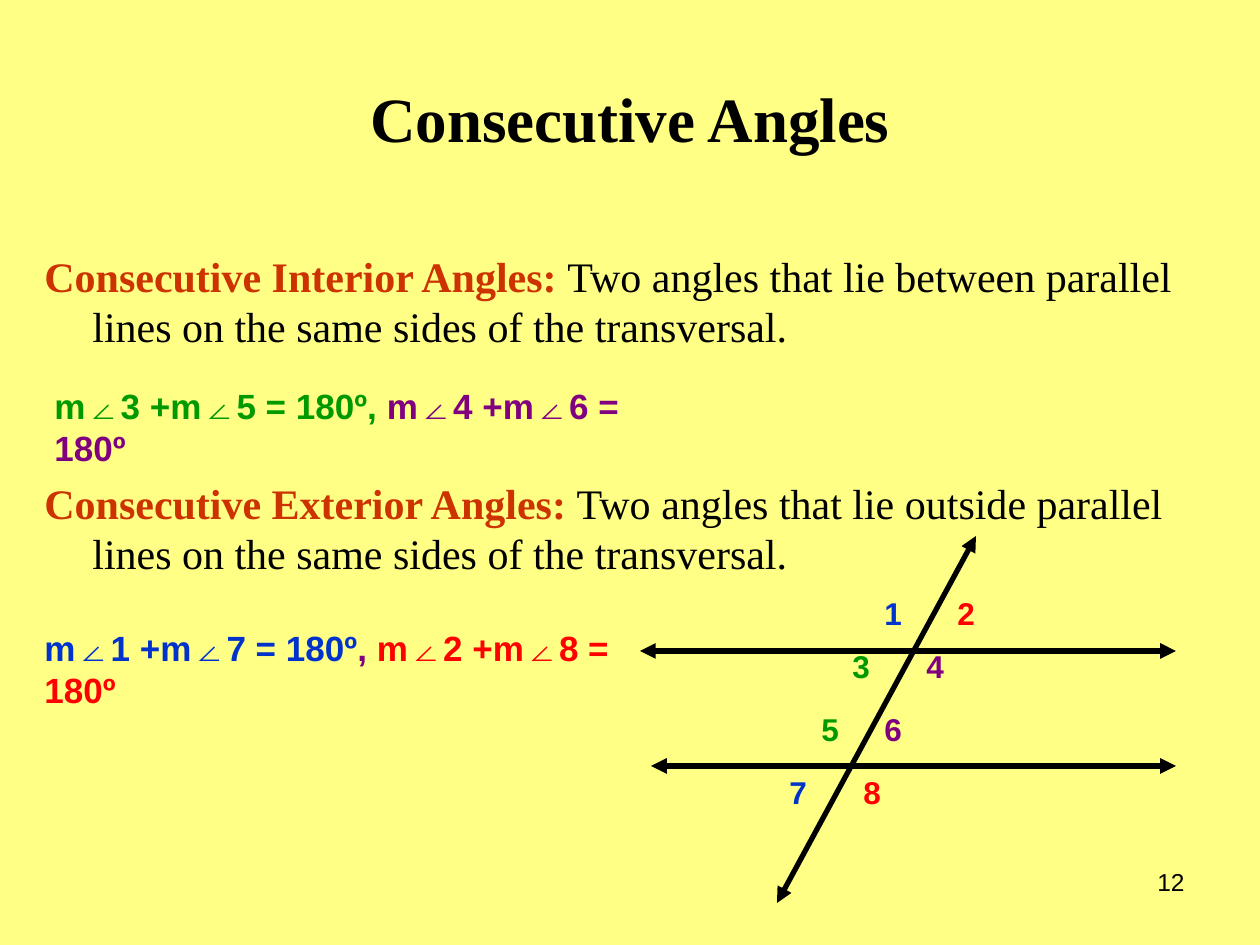
import pptx
import pptx.util
import pptx.dml.color
import pptx.enum.shapes
import pptx.enum.text
import pptx.oxml.ns
from lxml import etree
from typing import NamedTuple

PX = 914400 / 126
HUES = {
    "page": "FFFF85", "black": "000000", "rust": "CC3300", "green": "009900",
    "purple": "800080", "blue": "0033CC", "red": "FF0000",
}
ALIGN = pptx.enum.text.PP_ALIGN
ANCHOR = pptx.enum.text.MSO_ANCHOR


class Run(NamedTuple):
    text: str
    hue: str = "black"
    bold: bool = True


class Box(NamedTuple):
    left: int
    top: int
    width: int
    height: int


class Line(NamedTuple):
    x1: int
    y1: int
    x2: int
    y2: int


class Label(NamedTuple):
    text: str
    hue: str
    left: int
    top: int


def emu(px: int) -> int:
    return round(px * PX)


def rgb(hue: str) -> pptx.dml.color.RGBColor:
    return pptx.dml.color.RGBColor.from_string(HUES[hue])


def write(slide, box: Box, runs: list[Run], *, size: int, font: str = "Arial",
          align=ALIGN.LEFT, anchor=ANCHOR.TOP, hang: int = 0, pitch: float = 0) -> None:
    """Add one paragraph; hang is the hanging indent in px, pitch the line height in points."""
    frame = slide.shapes.add_textbox(*map(emu, box)).text_frame
    frame.word_wrap = True
    frame.vertical_anchor = anchor
    para = frame.paragraphs[0]
    para.alignment = align
    if hang:
        props = para._p.get_or_add_pPr()
        props.set("marL", str(emu(hang)))
        props.set("indent", str(-emu(hang)))
    if pitch:
        para.line_spacing = pptx.util.Pt(pitch)
    for part in runs:
        run = para.add_run()
        run.text = part.text
        run.font.name = font
        run.font.size = pptx.util.Pt(size)
        run.font.bold = part.bold
        run.font.color.rgb = rgb(part.hue)


def draw(slide, line: Line) -> None:
    """Add a line with an arrowhead at each end."""
    kind = pptx.enum.shapes.MSO_CONNECTOR.STRAIGHT
    arrow = slide.shapes.add_connector(kind, *map(emu, line))
    arrow.line.color.rgb = rgb("black")
    arrow.line.width = pptx.util.Pt(3)
    stroke = arrow.line._get_or_add_ln()
    for end in ("a:headEnd", "a:tailEnd"):
        etree.SubElement(stroke, pptx.oxml.ns.qn(end), type="triangle")
    etree.SubElement(arrow._element.spPr, pptx.oxml.ns.qn("a:effectLst"))


TERMS = [
    (244, "Consecutive Interior Angles: ",
     "Two angles that lie between parallel lines on the same sides of the transversal."),
    (471, "Consecutive Exterior Angles: ",
     "Two angles that lie outside parallel lines on the same sides of the transversal."),
]
SUMS = [
    (Box(42, 378, 609, 54),
     [Run("m∠3 +m∠5 = 180º,", "green"), Run(" m∠4 +m∠6 = 180º", "purple")]),
    (Box(32, 620, 599, 54),
     [Run("m∠1 +m∠7 = 180º", "blue"), Run(", ", "purple"), Run("m∠2 +m∠8 = 180º", "red")]),
]
LINES = [
    Line(640, 651, 1176, 651),
    Line(651, 766, 1176, 766),
    Line(976, 536, 777, 903),
]
LABELS = [
    Label("1", "blue", 872, 588), Label("2", "red", 945, 588),
    Label("3", "green", 840, 641), Label("4", "purple", 914, 641),
    Label("5", "green", 809, 704), Label("6", "purple", 872, 704),
    Label("7", "blue", 777, 767), Label("8", "red", 851, 767),
]


def main() -> None:
    deck = pptx.Presentation()
    deck.slide_width, deck.slide_height = emu(1260), emu(945)
    slide = deck.slides.add_slide(deck.slide_layouts[6])
    fill = slide.background.fill
    fill.solid()
    fill.fore_color.rgb = rgb("page")

    write(slide, Box(63, 38, 1134, 158), [Run("Consecutive Angles")], size=36,
          font="Times New Roman", align=ALIGN.CENTER, anchor=ANCHOR.MIDDLE)
    for top, term, text in TERMS:
        write(slide, Box(32, top, 1187, 120), [Run(term, "rust"), Run(text, bold=False)],
              size=24, font="Times New Roman", hang=48, pitch=28.8)
    for box, runs in SUMS:
        write(slide, box, runs, size=20)
    for line in LINES:
        draw(slide, line)
    for label in LABELS:
        write(slide, Box(label.left, label.top, 50, 63), [Run(label.text, label.hue)], size=18)
    write(slide, Box(903, 861, 294, 66), [Run("12", bold=False)], size=14, align=ALIGN.RIGHT)
    deck.save("out.pptx")


if __name__ == "__main__":
    main()
